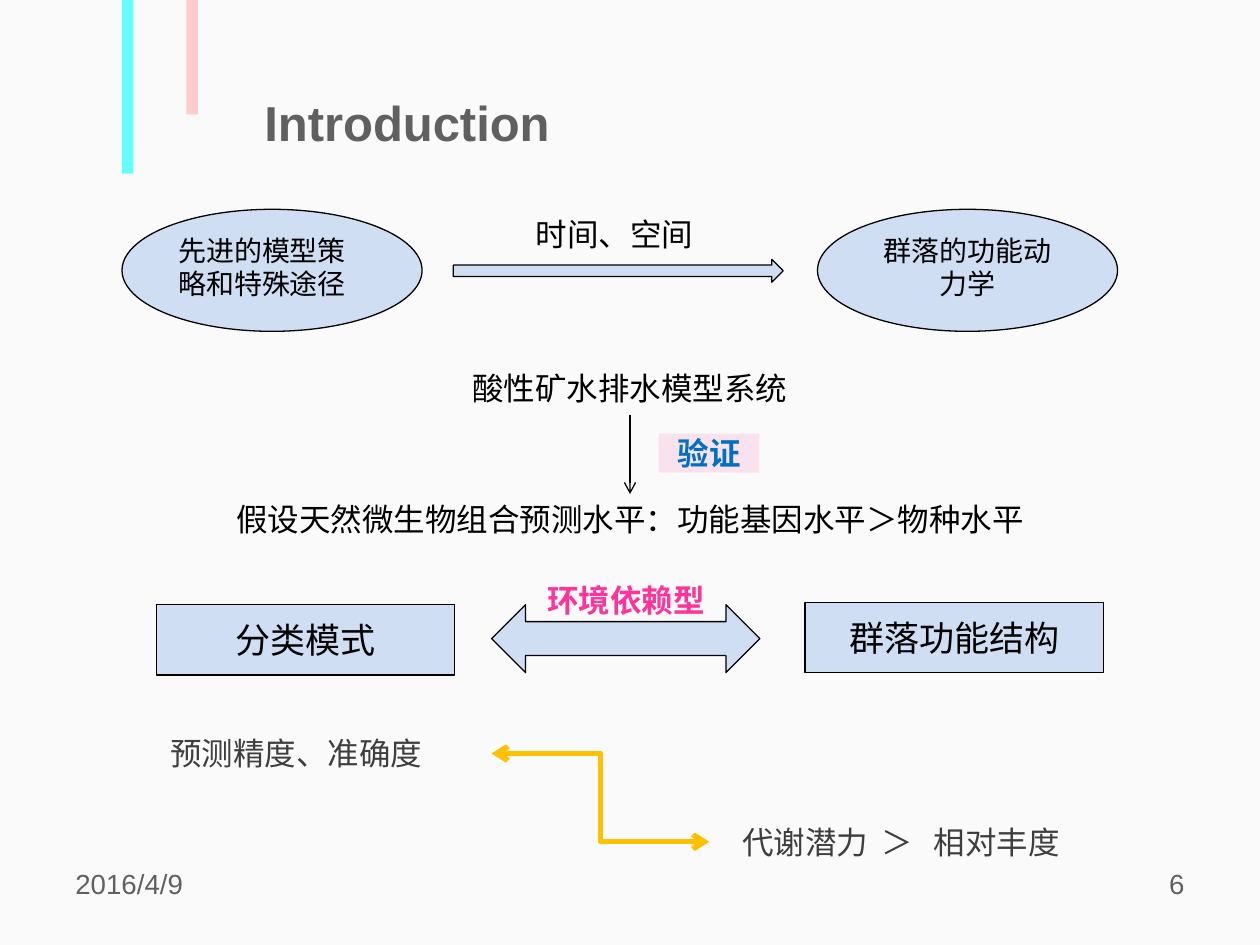
import pptx
import pptx.util
import pptx.dml.color
import pptx.enum.shapes
import pptx.enum.text
import pptx.oxml
import pptx.oxml.ns
from lxml import etree

Cm, Pt = pptx.util.Cm, pptx.util.Pt
RGB = pptx.dml.color.RGBColor
KIND = pptx.enum.shapes.MSO_SHAPE
LINK = pptx.enum.shapes.MSO_CONNECTOR
ALIGN = pptx.enum.text.PP_ALIGN
ANCHOR = pptx.enum.text.MSO_ANCHOR
qn = pptx.oxml.ns.qn

PAPER = RGB(0xFA, 0xFA, 0xFA)
AQUA = RGB(0x66, 0xFF, 0xFF)
ROSE = RGB(0xFF, 0xCC, 0xCC)
PALE = RGB(0xCF, 0xDE, 0xF3)
PINK = RGB(0xFF, 0x33, 0x99)
BLUE = RGB(0x00, 0x70, 0xC0)
GOLD = RGB(0xFF, 0xC0, 0x00)
GREY = RGB(0x60, 0x60, 0x60)
DARK = RGB(0x3E, 0x3E, 0x3E)
BLACK = RGB(0, 0, 0)

LEFT, MID, RIGHT = ALIGN.LEFT, ALIGN.CENTER, ALIGN.RIGHT
TOP, CORE = ANCHOR.TOP, ANCHOR.MIDDLE
ROW = 1.02

BARS = [
    (2.46, 3.5, AQUA),
    (3.76, 2.31, ROSE),
]
OVALS = [
    (16.48, "群落的功能动力学", MID),
    (2.46, "先进的模型策略和特殊途径", LEFT),
]
BOXES = [
    (3.15, 12.19, "分类模式"),
    (16.23, 12.14, "群落功能结构"),
]
ARROWS = [
    (KIND.RIGHT_ARROW, (9.14, 5.23, 6.65, 0.46)),
    (KIND.LEFT_RIGHT_ARROW, (9.91, 12.19, 5.41, 1.37)),
]
LABELS = [
    ((1.27, 17.35, 5.92, 1.32), "2016/4/9", 15.8, GREY, False, LEFT),
    ((18.21, 17.35, 5.92, 1.32), "6", 15.8, GREY, False, RIGHT),
    ((5.08, 1.75, 8.2, 1.45), "Introduction", 28, GREY, True, LEFT),
    ((9.91, 4.22, 4.95, ROW), "时间、空间", 18, BLACK, False, MID),
    ((8.76, 7.32, 7.87, ROW), "酸性矿水排水模型系统", 18, BLACK, False, MID),
    ((3.15, 9.96, 19.1, ROW), "假设天然微生物组合预测水平：功能基因水平＞物种水平",
     18, BLACK, False, MID),
    ((10.52, 11.58, 4.19, ROW), "环境依赖型", 18, PINK, True, MID),
    ((3.18, 14.68, 8.76, ROW), "预测精度、准确度", 18, DARK, False, LEFT),
]
CLAIM = ["代谢潜力", "\t＞", "\t相对丰度"]
STOPS = [2.82, 3.86]
LINKS = [
    (LINK.STRAIGHT, (12.7, 8.36, 12.7, 9.96), BLACK, 0.75, ["tailEnd"]),
    (LINK.ELBOW, (9.91, 15.19, 14.3, 16.97), GOLD, 3, ["headEnd", "tailEnd"]),
]


def write(shape, parts, size, color, bold=False, align=MID, anchor=CORE):
    frame = shape.text_frame
    frame.word_wrap = True
    frame.vertical_anchor = anchor
    para = frame.paragraphs[0]
    para.alignment = align
    for part in parts:
        run = para.add_run()
        run.text = part
        font = run.font
        font.name, font.size, font.bold = "Arial", Pt(size), bold
        font.color.rgb = color
    return para


def draw(slide, kind, spot, fill, line=None):
    shape = slide.shapes.add_shape(kind, *map(Cm, spot))
    shape.shadow.inherit = False
    shape.fill.solid()
    shape.fill.fore_color.rgb = fill
    if line is None:
        shape.line.fill.background()
    else:
        shape.line.color.rgb = line
        shape.line.width = Pt(0.75)
    return shape


def label(slide, spot, parts, size, color, bold, align):
    box = slide.shapes.add_textbox(*map(Cm, spot))
    return write(box, parts, size, color, bold, align, TOP)


def join(slide, kind, ends, color, width, heads):
    link = slide.shapes.add_connector(kind, *map(Cm, ends))
    link.line.color.rgb = color
    link.line.width = Pt(width)
    props = link.line._get_or_add_ln()
    for head in heads:
        etree.SubElement(props, qn("a:" + head), type="arrow")
    etree.SubElement(link._element.spPr, qn("a:effectLst"))


def main():
    deck = pptx.Presentation()
    deck.slide_width, deck.slide_height = Cm(25.4), Cm(19.05)
    slide = deck.slides.add_slide(deck.slide_layouts[6])
    slide.background.fill.solid()
    slide.background.fill.fore_color.rgb = PAPER

    for x, high, color in BARS:
        draw(slide, KIND.RECTANGLE, (x, 0, 0.23, high), color)
    for x, text, align in OVALS:
        oval = draw(slide, KIND.OVAL, (x, 4.22, 6.05, 2.46), PALE, BLACK)
        write(oval, [text], 16, BLACK, align=align, anchor=TOP)
    for x, y, text in BOXES:
        box = draw(slide, KIND.RECTANGLE, (x, y, 6.02, 1.42), PALE, BLACK)
        write(box, [text], 20, BLACK)
    for kind, spot in ARROWS:
        draw(slide, kind, spot, PALE, BLACK)

    tag = draw(slide, KIND.RECTANGLE, (13.28, 8.74, 2.03, 0.79), PINK)
    tint = tag._element.spPr.find(qn("a:solidFill"))[0]
    etree.SubElement(tint, qn("a:alpha"), val="12000")
    write(tag, ["验证"], 18, BLUE, True)

    for spot, text, *style in LABELS:
        label(slide, spot, [text], *style)
    para = label(slide, (14.71, 16.46, 10.9, ROW), CLAIM, 18, DARK, False, LEFT)
    tabs = etree.SubElement(para._p.get_or_add_pPr(), qn("a:tabLst"))
    for stop in STOPS:
        etree.SubElement(tabs, qn("a:tab"), pos=str(int(Cm(stop))), algn="l")

    for item in LINKS:
        join(slide, *item)
    deck.save("out.pptx")


if __name__ == "__main__":
    main()
